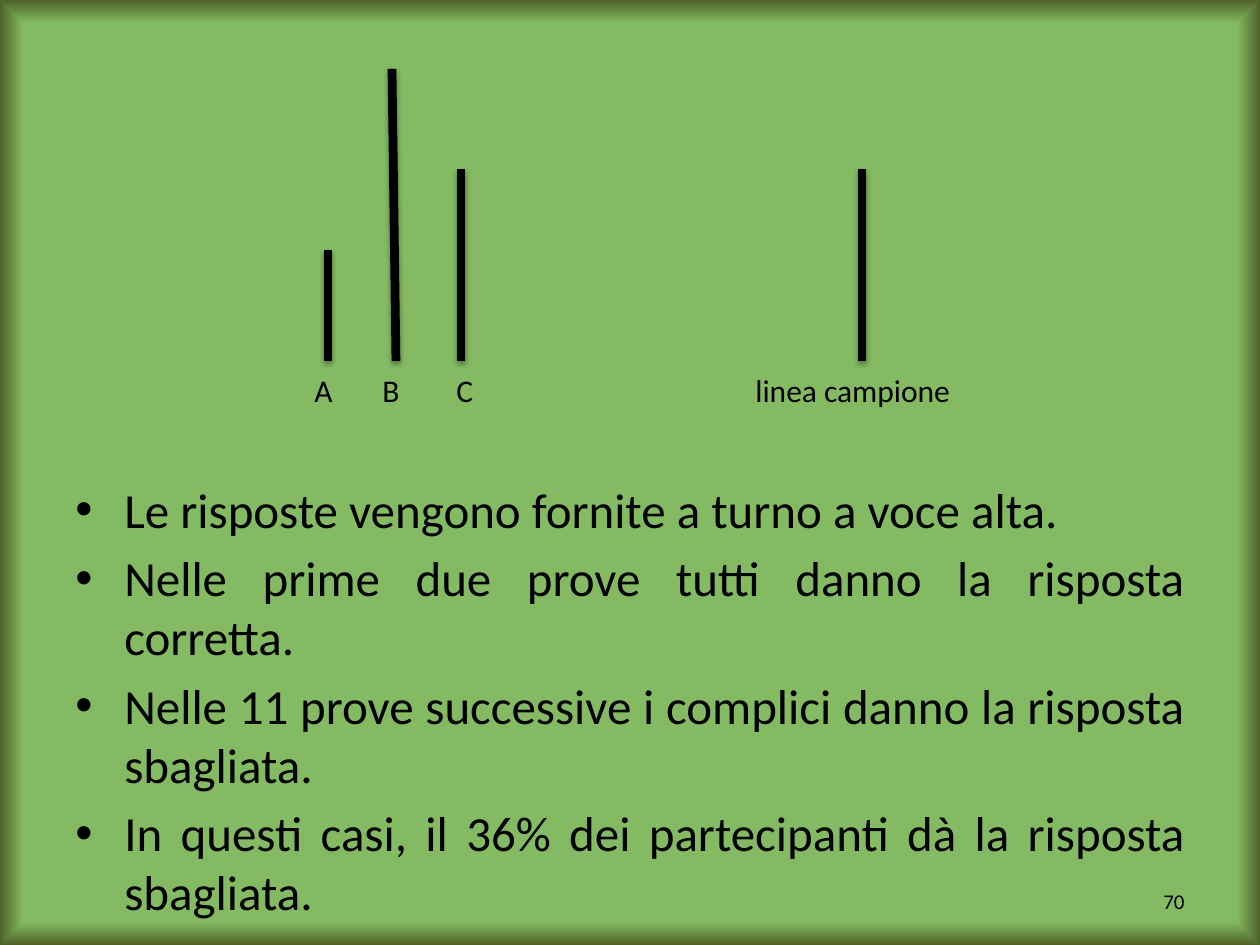
import dataclasses

import lxml.etree
import pptx
import pptx.dml.color
import pptx.enum.shapes
import pptx.enum.text
import pptx.oxml.ns
import pptx.util

PX = 914400 / 126  # EMU in one px
ALIGN = pptx.enum.text.PP_ALIGN
ANCHOR = pptx.enum.text.MSO_ANCHOR


@dataclasses.dataclass(frozen=True)
class Theme:
    font: str = "Calibri"
    ink: str = "000000"
    field: str = "84BB62"
    edge: str = "4F6228"
    body_size: int = 28
    label_size: int = 18
    number_size: int = 12
    line_width: int = 5


THEME = Theme()

BULLETS = [
    "Le risposte vengono fornite a turno a voce alta.",
    "Nelle prime due prove tutti danno la risposta corretta.",
    "Nelle 11 prove successive i complici danno la risposta sbagliata.",
    "In questi casi, il 36% dei partecipanti dà la risposta sbagliata.",
]
LABELS = ["A", "B", "C", "linea campione"]
LABEL_TABS = [68, 142, 441]
# Top x, bottom x and height of each line, from the figure's left and base
LINES = [(26, 26, 111), (90, 94, 292), (159, 159, 192), (560, 560, 192)]


def emu(px):
    return pptx.util.Emu(round(px * PX))


def color(value):
    return pptx.dml.color.RGBColor.from_string(value)


def add_xml(parent, tag, **attributes):
    name = pptx.oxml.ns.qn("a:" + tag)
    return lxml.etree.SubElement(parent, name, attributes)


def add_text_box(page, box, anchor=ANCHOR.TOP):
    frame = page.shapes.add_textbox(*map(emu, box)).text_frame
    frame.word_wrap = True
    frame.vertical_anchor = anchor
    return frame


def add_span(para, text, size):
    span = para.add_run()
    span.text = text
    span.font.name = THEME.font
    span.font.size = pptx.util.Pt(size)
    span.font.color.rgb = color(THEME.ink)


def paint_background(page):
    fill = page.background.fill
    fill.gradient()
    stops = zip(fill.gradient_stops, (0.95, 1), (THEME.field, THEME.edge))
    for stop, position, value in stops:
        stop.position = position
        stop.color.rgb = color(value)
    # A rectangular gradient takes the place of the linear one
    linear = page.element.find(".//" + pptx.oxml.ns.qn("a:lin"))
    gradient = linear.getparent()
    gradient.remove(linear)
    shape_path = add_xml(gradient, "path", path="shape")
    add_xml(shape_path, "fillToRect", l="50000", t="50000", r="50000", b="50000")


def add_line(page, start, end):
    line = page.shapes.add_connector(
        pptx.enum.shapes.MSO_CONNECTOR.STRAIGHT, *map(emu, start + end))
    line.line.color.rgb = color(THEME.ink)
    line.line.width = pptx.util.Pt(THEME.line_width)
    # Soft shadow straight below
    effects = add_xml(line.element.spPr, "effectLst")
    shadow = add_xml(effects, "outerShdw", blurRad="40000", dist="20000",
                     dir="5400000", rotWithShape="0")
    ink = add_xml(shadow, "srgbClr", val=THEME.ink)
    add_xml(ink, "alpha", val="38000")


def add_figure(page, box):
    left, top, width, height = box
    label_height = 50
    base = top + height - label_height - 4
    for top_x, bottom_x, length in LINES:
        add_line(page, (left + top_x, base - length), (left + bottom_x, base))
    # Labels share one line, set out with tab stops
    frame = add_text_box(page, (left, base + 4, width, label_height))
    para = frame.paragraphs[0]
    tabs = add_xml(para._p.get_or_add_pPr(), "tabLst")
    for stop in LABEL_TABS:
        add_xml(tabs, "tab", pos=str(emu(stop)), algn="l")
    add_span(para, "\t".join(LABELS), THEME.label_size)


def add_bullets(page, box):
    frame = add_text_box(page, box)
    indent = emu(49)
    for index, text in enumerate(BULLETS):
        para = frame.add_paragraph() if index else frame.paragraphs[0]
        properties = para._p.get_or_add_pPr()
        properties.set("marL", str(indent))
        properties.set("indent", str(-indent))
        add_xml(properties, "buFont", typeface="Arial")
        add_xml(properties, "buChar", char="•")
        para.alignment = ALIGN.JUSTIFY
        if index:
            para.space_before = pptx.util.Pt(THEME.body_size * 0.2)
        add_span(para, text, THEME.body_size)


def add_page_number(page, box):
    para = add_text_box(page, box, ANCHOR.MIDDLE).paragraphs[0]
    para.alignment = ALIGN.RIGHT
    add_span(para, "70", THEME.number_size)


def main():
    deck = pptx.Presentation()
    deck.slide_width, deck.slide_height = emu(1260), emu(945)
    page = deck.slides.add_slide(deck.slide_layouts[6])
    paint_background(page)
    add_bullets(page, (63, 473, 1134, 453))
    add_page_number(page, (903, 876, 294, 50))
    add_figure(page, (302, 69, 754, 346))
    deck.save("out.pptx")


if __name__ == "__main__":
    main()
